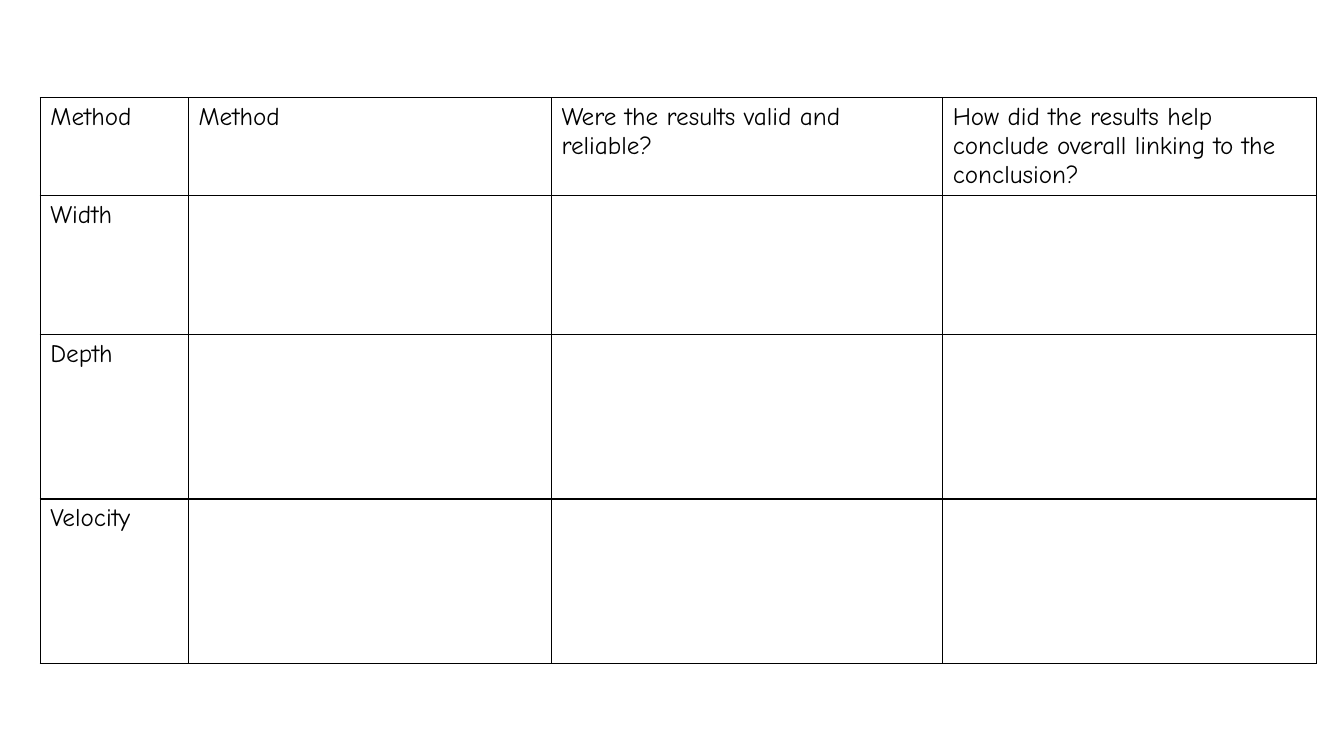
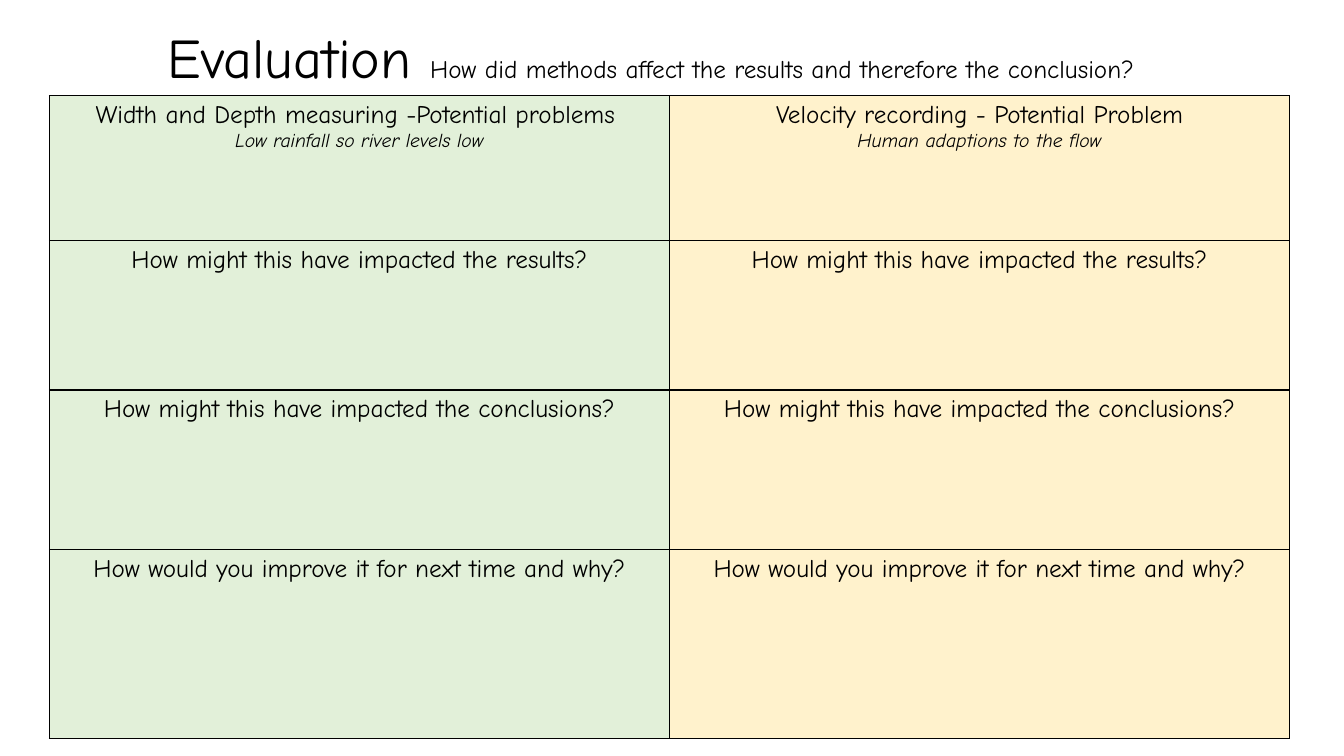
from dataclasses import dataclass

from lxml import etree
from pptx import Presentation
from pptx.dml.color import RGBColor
from pptx.enum.text import MSO_ANCHOR, MSO_AUTO_SIZE, PP_ALIGN
from pptx.oxml.ns import qn
from pptx.util import Inches, Pt

LEFT, CENTER = PP_ALIGN.LEFT, PP_ALIGN.CENTER
TOP = MSO_ANCHOR.TOP
NO_AUTOFIT = MSO_AUTO_SIZE.NONE
TITLE_ONLY, BLANK = 5, 6


@dataclass(frozen=True)
class Theme:
    font: str = "Comic Neue"
    ink: str = "000000"
    green: str = "E2F0D9"
    yellow: str = "FFF2CC"
    title: int = 40
    body: int = 18
    note: int = 14
    border: int = 1


THEME = Theme()

METHOD_ROWS = [
    ("Method", "Method", "Were the results valid and reliable?",
     "How did the results help conclude overall linking to the conclusion?"),
    ("Width", "", "", ""),
    ("Depth", "", "", ""),
    ("Velocity", "", "", ""),
]
METHOD_COLS = (1.47, 3.6, 3.88, 3.71)
METHOD_HEIGHTS = (0.97, 1.38, 1.63, 1.63)

TITLE = "Evaluation "
SUBTITLE = "How did methods affect the results and therefore the conclusion?"
PROBLEMS = (
    ("Width and Depth measuring -Potential problems ", "Low rainfall so river levels low"),
    ("Velocity recording - Potential Problem", "Human adaptions to the flow"),
)
QUESTIONS = (
    "How might this have impacted the results?",
    "How might this have impacted the conclusions?",
    "How would you improve it for next time and why?",
)
EVALUATION_ROWS = [PROBLEMS] + [(question,) * len(PROBLEMS) for question in QUESTIONS]
EVALUATION_COLS = (6.15, 6.15)
EVALUATION_HEIGHTS = (1.44, 1.48, 1.58, 1.88)


def add_run(p, text, size, italic=False):
    r = p.add_run()
    r.text = text
    r.font.name = THEME.font
    r.font.size = Pt(size)
    r.font.italic = italic
    r.font.color.rgb = RGBColor.from_string(THEME.ink)


def set_borders(cell):
    tc_pr = cell._tc.get_or_add_tcPr()
    for side in ("lnL", "lnR", "lnT", "lnB"):
        line = etree.SubElement(tc_pr, qn(f"a:{side}"), w=str(Pt(THEME.border)))
        fill = etree.SubElement(line, qn("a:solidFill"))
        etree.SubElement(fill, qn("a:srgbClr"), val=THEME.ink)


def fill_cell(cell, content, align, color):
    """Write a heading, or a (heading, note) pair, into a bordered cell."""
    set_borders(cell)
    if color:
        cell.fill.solid()
        cell.fill.fore_color.rgb = RGBColor.from_string(color)
    else:
        cell.fill.background()
    heading, note = (content, "") if isinstance(content, str) else content
    tf = cell.text_frame
    p = tf.paragraphs[0]
    p.alignment = align
    if heading:
        add_run(p, heading, THEME.body)
    if note:
        p = tf.add_paragraph()
        p.alignment = align
        add_run(p, note, THEME.note, italic=True)


def add_grid(s, left, top, rows, widths, heights, colors, align):
    frame = s.shapes.add_table(len(rows), len(widths), Inches(left), Inches(top),
                               Inches(sum(widths)), Inches(sum(heights)))
    table = frame.table
    table.first_row = table.horz_banding = False
    for column, width in zip(table.columns, widths):
        column.width = Inches(width)
    for row, height, contents in zip(table.rows, heights, rows):
        row.height = Inches(height)
        for cell, content, color in zip(row.cells, contents, colors):
            fill_cell(cell, content, align, color)


def add_title(s):
    sp = s.shapes.title
    sp.left, sp.top, sp.width, sp.height = map(Inches, (0.49, 0.17, 11.93, 0.77))
    tf = sp.text_frame
    tf.word_wrap = True
    tf.auto_size = NO_AUTOFIT
    tf.vertical_anchor = TOP
    p = tf.paragraphs[0]
    p.alignment = CENTER
    add_run(p, TITLE, THEME.title)
    add_run(p, SUBTITLE, THEME.body)


def main():
    prs = Presentation()
    prs.slide_width, prs.slide_height = Inches(13.33), Inches(7.5)

    s = prs.slides.add_slide(prs.slide_layouts[BLANK])
    add_grid(s, 0.4, 0.97, METHOD_ROWS, METHOD_COLS, METHOD_HEIGHTS,
             (None,) * len(METHOD_COLS), LEFT)

    s = prs.slides.add_slide(prs.slide_layouts[TITLE_ONLY])
    add_title(s)
    add_grid(s, 0.49, 0.95, EVALUATION_ROWS, EVALUATION_COLS, EVALUATION_HEIGHTS,
             (THEME.green, THEME.yellow), CENTER)

    prs.save("out.pptx")


if __name__ == "__main__":
    main()
